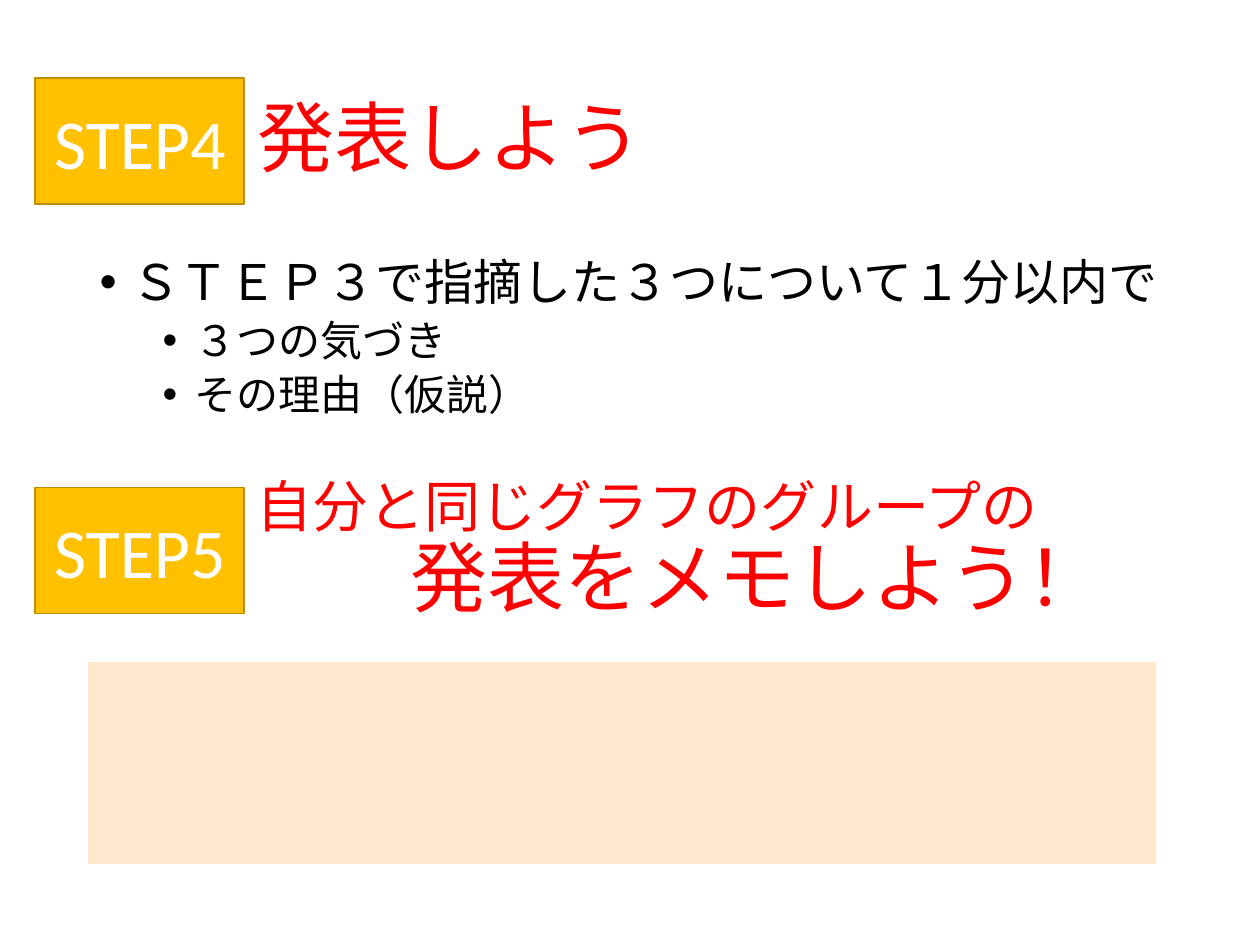
from pptx import Presentation
from pptx.dml.color import RGBColor
from pptx.enum.shapes import MSO_SHAPE
from pptx.enum.text import MSO_ANCHOR, MSO_AUTO_SIZE, PP_ALIGN
from pptx.util import Inches, Pt

COLORS = {"red": "FF0000", "black": "000000", "white": "FFFFFF",
          "gold": "FFC000", "edge": "BD8E00", "cream": "FFE8CC"}
FONT = "Calibri"
LEFT, GAP = 0.28, 1.66
HEAD_W, HEAD_H = 7.37, 1.45


def color(name):
    return RGBColor.from_string(COLORS[name])


def place(shape, x, y, w, h):
    shape.left, shape.top = Inches(x), Inches(y)
    shape.width, shape.height = Inches(w), Inches(h)


def style(para, size, tint, align=PP_ALIGN.LEFT, space=0.9):
    para.alignment, para.line_spacing = align, space
    para.font.name, para.font.size = FONT, Pt(size)
    para.font.color.rgb = color(tint)


def indent(para, left, first=0):
    """Set the left margin and first-line offset in inches."""
    props = para._p.get_or_add_pPr()
    props.set("marL", str(Inches(left)))
    props.set("indent", str(Inches(first)))


def fill_text(shape, lines, tint, anchor):
    """Write (text, size) lines and return their paragraphs."""
    frame = shape.text_frame
    frame.word_wrap, frame.auto_size = True, MSO_AUTO_SIZE.NONE
    frame.vertical_anchor = anchor
    frame.text = "\n".join(text for text, _ in lines)
    for para, (_, size) in zip(frame.paragraphs, lines):
        style(para, size, tint)
    return frame.paragraphs


def add_badge(slide, label, x, y, w=GAP, h=1):
    badge = slide.shapes.add_shape(
        MSO_SHAPE.RECTANGLE, Inches(x), Inches(y), Inches(w), Inches(h))
    badge.shadow.inherit = False
    badge.fill.solid()
    badge.fill.fore_color.rgb = color("gold")
    badge.line.color.rgb = color("edge")
    badge.line.width = Pt(1)
    para, = fill_text(badge, [(label, 40)], "white", MSO_ANCHOR.MIDDLE)
    style(para, 40, "white", PP_ALIGN.CENTER, 1.0)


def add_step(slide, head, label, lines, x, y, drop):
    """Place a heading with its badge to the left, drop inches lower."""
    place(head, x + GAP, y, HEAD_W, HEAD_H)
    add_badge(slide, label, x, y + drop)
    return fill_text(head, lines, "red", MSO_ANCHOR.MIDDLE)


def fill_list(body, x, y, w, h):
    place(body, x, y, w, h)
    items = [("ＳＴＥＰ３で指摘した３つについて１分以内で", 28),
             ("３つの気づき", 24), ("その理由（仮説）", 24)]
    paras = fill_text(body, items, "black", MSO_ANCHOR.TOP)
    for i, para in enumerate(paras):
        para.level = min(i, 1)
        para.space_before = Pt(5 if para.level else 10)
        indent(para, 0.25 + 0.5 * para.level, -0.25)
        bullet = para._p.get_or_add_pPr().makeelement(
            "{http://schemas.openxmlformats.org/drawingml/2006/main}buChar",
            {"char": "•"})
        para._p.pPr.insert_element_before(bullet, "a:tabLst", "a:defRPr", "a:extLst")


def add_memo(slide, x, y, w, h):
    table = slide.shapes.add_table(
        1, 1, Inches(x), Inches(y), Inches(w), Inches(h)).table
    table.first_row = False
    cell = table.cell(0, 0)
    cell.fill.solid()
    cell.fill.fore_color.rgb = color("cream")


def main():
    deck = Presentation()
    deck.slide_width, deck.slide_height = Inches(10), Inches(7.5)
    slide = deck.slides.add_slide(deck.slide_layouts[1])
    title, body = slide.placeholders
    fill_list(body, 0.69, 2, 8.62, 1.5)
    add_step(slide, title, "STEP4", [("発表しよう", 44)], LEFT, 0.4, 0.22)
    note = slide.shapes.add_textbox(0, 0, 0, 0)
    paras = add_step(slide, note, "STEP5",
                     [("自分と同じグラフのグループの", 32),
                      ("発表をメモしよう！", 44)], LEFT, 3.65, 0.22)
    indent(paras[1], 1.22)
    add_memo(slide, 0.69, 5.25, 8.49, 1.61)
    deck.save("out.pptx")


if __name__ == "__main__":
    main()
